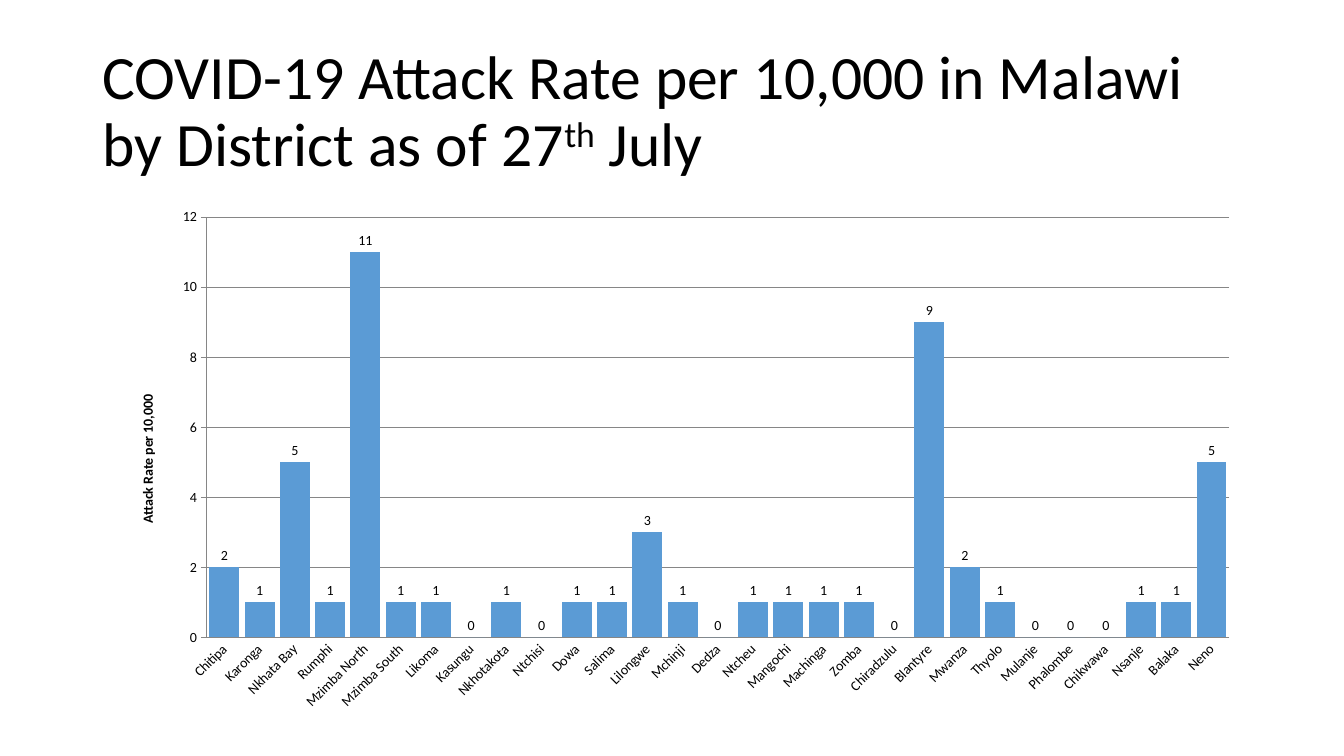
from dataclasses import dataclass

from lxml import etree
from pptx import Presentation
from pptx.chart.data import CategoryChartData
from pptx.dml.color import RGBColor
from pptx.enum.chart import XL_CHART_TYPE, XL_LABEL_POSITION, XL_TICK_MARK
from pptx.enum.text import MSO_ANCHOR, MSO_AUTO_SIZE, PP_ALIGN
from pptx.oxml.ns import qn
from pptx.util import Cm, Pt

COLUMN = XL_CHART_TYPE.COLUMN_CLUSTERED
ABOVE = XL_LABEL_POSITION.OUTSIDE_END
NO_TICK, TICK_OUT = XL_TICK_MARK.NONE, XL_TICK_MARK.OUTSIDE
MIDDLE, LEFT, NO_FIT = MSO_ANCHOR.MIDDLE, PP_ALIGN.LEFT, MSO_AUTO_SIZE.NONE


@dataclass(frozen=True)
class Theme:
    face: str = "Calibri"
    ink: RGBColor = RGBColor(0x00, 0x00, 0x00)
    bar: RGBColor = RGBColor(0x5B, 0x9B, 0xD5)
    rule: RGBColor = RGBColor(0x86, 0x86, 0x86)
    head: Pt = Pt(44)
    small: Pt = Pt(10)


@dataclass(frozen=True)
class Box:
    left: float
    top: float
    width: float
    height: float

    def lengths(self) -> tuple:
        return Cm(self.left), Cm(self.top), Cm(self.width), Cm(self.height)


@dataclass(frozen=True)
class Rate:
    place: str
    value: int


THEME = Theme()
HEAD_BOX = Box(2.33, 1.01, 29.21, 3.68)
CHART_BOX = Box(2.92, 5.08, 28.63, 13.08)
PLOT = {"x": 0.08, "y": 0.03, "w": 0.9, "h": 0.81}  # shares of the chart

RATES = [
    Rate("Chitipa", 2), Rate("Karonga", 1), Rate("Nkhata Bay", 5),
    Rate("Rumphi", 1), Rate("Mzimba North", 11), Rate("Mzimba South", 1),
    Rate("Likoma", 1), Rate("Kasungu", 0), Rate("Nkhotakota", 1),
    Rate("Ntchisi", 0), Rate("Dowa", 1), Rate("Salima", 1),
    Rate("Lilongwe", 3), Rate("Mchinji", 1), Rate("Dedza", 0),
    Rate("Ntcheu", 1), Rate("Mangochi", 1), Rate("Machinga", 1),
    Rate("Zomba", 1), Rate("Chiradzulu", 0), Rate("Blantyre", 9),
    Rate("Mwanza", 2), Rate("Thyolo", 1), Rate("Mulanje", 0),
    Rate("Phalombe", 0), Rate("Chikwawa", 0), Rate("Nsanje", 1),
    Rate("Balaka", 1), Rate("Neno", 5),
]


def style(font, size: Pt, bold: bool = False) -> None:
    font.name, font.size, font.bold = THEME.face, size, bold
    font.color.rgb = THEME.ink


def rule(line) -> None:
    line.color.rgb = THEME.rule
    line.width = Pt(0.75)


def add_head(slide) -> None:
    head = slide.shapes.title
    head.left, head.top, head.width, head.height = HEAD_BOX.lengths()
    frame = head.text_frame
    frame.auto_size, frame.vertical_anchor = NO_FIT, MIDDLE
    para = frame.paragraphs[0]
    para.alignment, para.line_spacing = LEFT, 0.9
    style(para.font, THEME.head)
    para.add_run().text = "COVID-19 Attack Rate per 10,000 in Malawi by District as of 27"
    raised = para.add_run()
    raised.text = "th"
    raised._r.get_or_add_rPr().set("baseline", "30000")
    para.add_run().text = " July"


def fix_plot(chart) -> None:
    """Give the inner plot area a fixed place."""
    area = chart._chartSpace.find(".//" + qn("c:plotArea"))
    for old in area.findall(qn("c:layout")):
        area.remove(old)
    layout = etree.Element(qn("c:layout"))
    manual = etree.SubElement(layout, qn("c:manualLayout"))
    parts = {"layoutTarget": "inner", "xMode": "edge", "yMode": "edge", **PLOT}
    for name, value in parts.items():
        etree.SubElement(manual, qn("c:" + name)).set("val", str(value))
    area.insert(0, layout)


def add_chart(slide) -> None:
    data = CategoryChartData(number_format="#,##0")
    data.categories = [rate.place for rate in RATES]
    data.add_series("Series 1", [rate.value for rate in RATES])
    chart = slide.shapes.add_chart(COLUMN, *CHART_BOX.lengths(), data).chart
    chart.has_legend = chart.has_title = False
    style(chart.font, THEME.small)
    fix_plot(chart)

    # Bars and their labels
    plot = chart.plots[0]
    plot.gap_width, plot.vary_by_categories = 18, False
    fill = plot.series[0].format.fill
    fill.solid()
    fill.fore_color.rgb = THEME.bar
    plot.has_data_labels = True
    labels = plot.data_labels
    labels.show_value, labels.position = True, ABOVE
    labels.number_format, labels.number_format_is_linked = "#,##0", False
    style(labels.font, THEME.small)

    # District axis, with slanted names
    base = chart.category_axis
    base.major_tick_mark = base.minor_tick_mark = NO_TICK
    base.has_major_gridlines = False
    rule(base.format.line)
    style(base.tick_labels.font, THEME.small)
    slant = base._element.find(qn("c:txPr")).find(qn("a:bodyPr"))
    slant.set("rot", "-2700000")
    slant.set("vert", "horz")

    # Rate axis
    side = chart.value_axis
    side.minimum_scale, side.maximum_scale, side.major_unit = 0, 12, 2
    side.major_tick_mark, side.minor_tick_mark = TICK_OUT, NO_TICK
    side.has_major_gridlines = True
    rule(side.major_gridlines.format.line)
    rule(side.format.line)
    ticks = side.tick_labels
    ticks.number_format, ticks.number_format_is_linked = "#,##0", False
    style(ticks.font, THEME.small)
    side.has_title = True
    name = side.axis_title.text_frame
    name.text = "Attack Rate per 10,000"
    style(name.paragraphs[0].font, THEME.small, bold=True)


def main() -> None:
    deck = Presentation()
    deck.slide_width, deck.slide_height = Cm(33.87), Cm(19.05)
    slide = deck.slides.add_slide(deck.slide_layouts[5])
    add_head(slide)
    add_chart(slide)
    deck.save("out.pptx")


if __name__ == "__main__":
    main()
